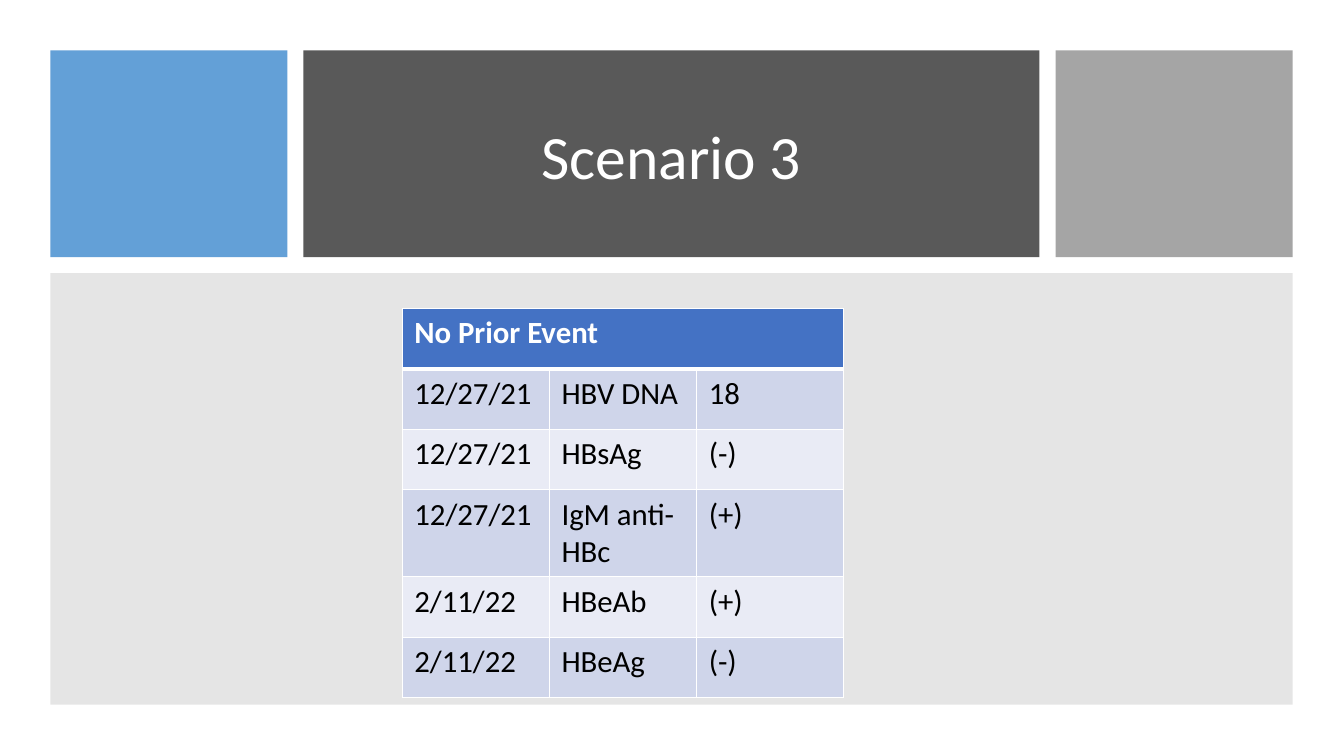
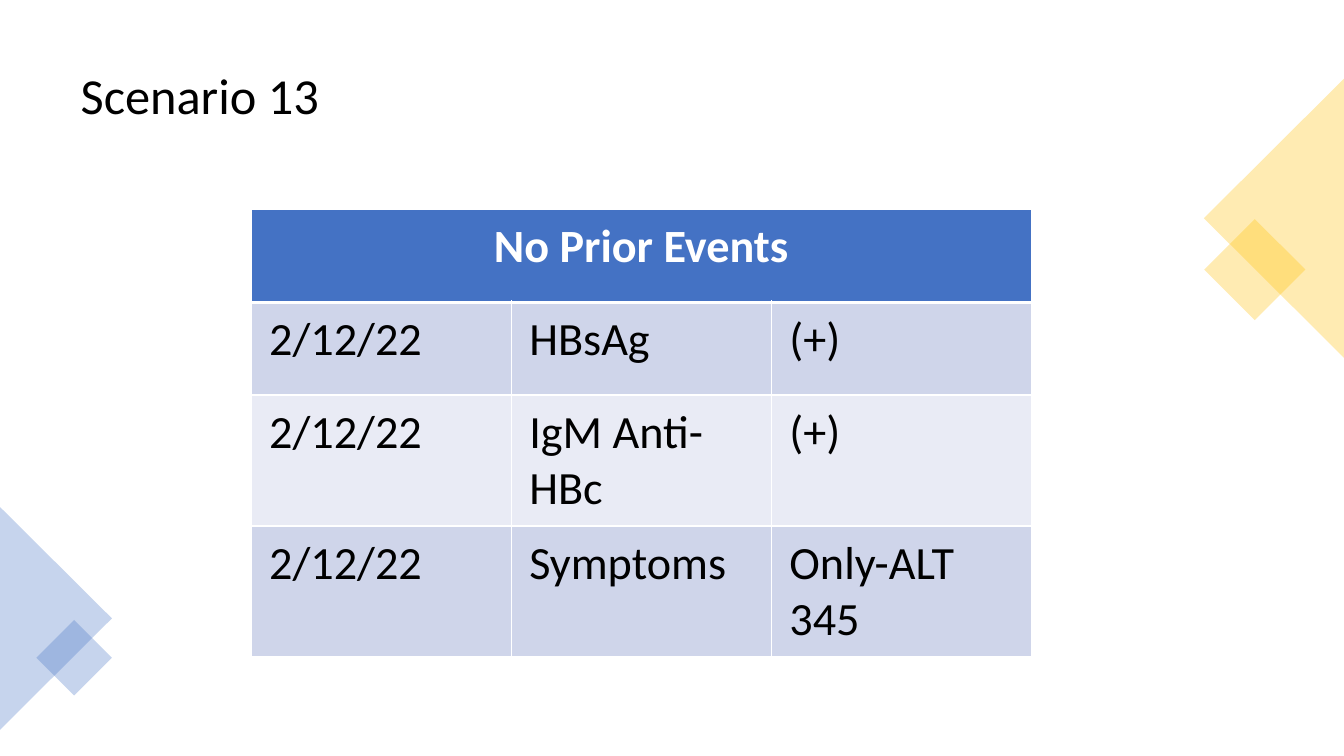
from dataclasses import dataclass

from lxml import etree
from pptx import Presentation
from pptx.dml.color import RGBColor
from pptx.enum.shapes import MSO_SHAPE
from pptx.enum.text import MSO_ANCHOR, PP_ALIGN
from pptx.oxml.ns import qn
from pptx.util import Inches, Pt

RECTANGLE = MSO_SHAPE.RECTANGLE
TRIANGLE = MSO_SHAPE.ISOSCELES_TRIANGLE
LEFT, CENTER = PP_ALIGN.LEFT, PP_ALIGN.CENTER
MIDDLE, TOP = MSO_ANCHOR.MIDDLE, MSO_ANCHOR.TOP
TITLE_ONLY = 5


@dataclass(frozen=True)
class Theme:
    font: str = "Calibri"
    white: str = "FFFFFF"
    black: str = "000000"
    sky: str = "5B9BD5"
    charcoal: str = "595959"
    silver: str = "A5A5A5"
    gray: str = "808080"
    blue: str = "4472C4"
    gold: str = "FFC000"
    row_bands: tuple = ("CFD5EA", "E9EBF5")
    banner_title: int = 44
    plain_title: int = 36
    small_table: int = 22
    large_table: int = 33
    border: int = 1
    header_border: int = 3


THEME = Theme()


def add_panel(page, kind, frame, color, opacity=100, rotation=0):
    """Add an unlined shape; frame is left, top, width, height in inches."""
    panel = page.shapes.add_shape(kind, *map(Inches, frame))
    panel.shadow.inherit = False
    panel.line.fill.background()
    panel.rotation = rotation
    panel.fill.solid()
    panel.fill.fore_color.rgb = RGBColor.from_string(color)
    if opacity < 100:
        tint = panel.element.spPr.find(".//" + qn("a:srgbClr"))
        etree.SubElement(tint, qn("a:alpha"), val=str(opacity * 1000))


def add_border(cell, side, points):
    line = etree.SubElement(cell._tc.get_or_add_tcPr(), qn(f"a:ln{side}"), w=str(Pt(points)))
    fill = etree.SubElement(line, qn("a:solidFill"))
    etree.SubElement(fill, qn("a:srgbClr"), val=THEME.white)


deck = Presentation()
deck.slide_width, deck.slide_height = Inches(13.33), Inches(7.5)

scenarios = [
    {
        "title": "Scenario 3", "title_frame": (3.33, 0.8, 6.66, 1.56),
        "title_size": THEME.banner_title, "title_color": THEME.white, "title_align": CENTER,
        "heading": "No Prior Event", "heading_align": LEFT,
        "rows": [
            ("12/27/21", "HBV DNA", "18"),
            ("12/27/21", "HBsAg", "(-)"),
            ("12/27/21", "IgM anti-HBc", "(+)"),
            ("2/11/22", "HBeAb", "(+)"),
            ("2/11/22", "HBeAg", "(-)"),
        ],
        "corner": (3.99, 3.06), "column_width": 1.46, "row_height": 0.6,
        "text_size": THEME.small_table, "inset": 0.12,
    },
    {
        "title": "Scenario 13", "title_frame": (0.7, 0.35, 11.93, 1.24),
        "title_size": THEME.plain_title, "title_color": THEME.black, "title_align": LEFT,
        "heading": "No Prior Events", "heading_align": CENTER,
        "rows": [
            ("2/12/22", "HBsAg", "(+)"),
            ("2/12/22", "IgM Anti-HBc", "(+)"),
            ("2/12/22", "Symptoms", "Only-ALT 345"),
        ],
        "corner": (2.49, 2.08), "column_width": 2.58, "row_height": 0.92,
        "text_size": THEME.large_table, "inset": 0.18,
    },
]
pages = [deck.slides.add_slide(deck.slide_layouts[TITLE_ONLY]) for _ in scenarios]

# Scenario 3: three header blocks above a content panel
margin, gap, header_height = 0.5, 0.16, 2.05
left = margin
for width, color, opacity in [
    (2.35, THEME.sky, 95), (7.3, THEME.charcoal, 100), (2.35, THEME.silver, 100),
]:
    add_panel(pages[0], RECTANGLE, (left, margin, width, header_height), color, opacity)
    left += width + gap
content_top = margin + header_height + gap
add_panel(pages[0], RECTANGLE, (margin, content_top, left - gap - margin, 4.28), THEME.gray, 20)

# Scenario 13: overlapping diamonds at the slide edges
for kind, frame, color, rotation in [
    (RECTANGLE, (12.09, 2.32, 0.71, 0.71), THEME.gold, 45),
    (TRIANGLE, (11.25, 1.47, 2.77, 1.39), THEME.gold, 270),
    (TRIANGLE, (-0.55, 5.58, 2.21, 1.11), THEME.blue, 90),
    (RECTANGLE, (0.47, 6.26, 0.53, 0.53), THEME.blue, 45),
]:
    add_panel(pages[1], kind, frame, color, 30, rotation)

# Titles and result tables
for page, scenario in zip(pages, scenarios):
    title = page.shapes.title
    page.shapes.element.append(title.element)  # bring in front of the panels
    title.left, title.top, title.width, title.height = map(Inches, scenario["title_frame"])
    title.text_frame.text = scenario["title"]
    title.text_frame.vertical_anchor = MIDDLE
    para = title.text_frame.paragraphs[0]
    para.alignment = scenario["title_align"]
    para.line_spacing = 0.9
    para.font.name = THEME.font
    para.font.size = Pt(scenario["title_size"])
    para.font.color.rgb = RGBColor.from_string(scenario["title_color"])

    rows = [(scenario["heading"], "", "")] + scenario["rows"]
    column_count = len(rows[0])
    table = page.shapes.add_table(
        len(rows), column_count, *map(Inches, scenario["corner"]),
        Inches(scenario["column_width"] * column_count),
        Inches(scenario["row_height"] * len(rows)),
    ).table
    for column in table.columns:
        column.width = Inches(scenario["column_width"])
    table.cell(0, 0).merge(table.cell(0, column_count - 1))

    for row_index, values in enumerate(rows):
        is_header = row_index == 0
        table.rows[row_index].height = Inches(scenario["row_height"])
        fill = THEME.blue if is_header else THEME.row_bands[(row_index - 1) % 2]
        text_color = THEME.white if is_header else THEME.black
        above = THEME.header_border if row_index == 1 else THEME.border
        below = THEME.header_border if is_header else THEME.border
        for column_index, value in enumerate(values):
            cell = table.cell(row_index, column_index)
            for side, points in zip("LRTB", (THEME.border, THEME.border, above, below)):
                add_border(cell, side, points)
            cell.fill.solid()
            cell.fill.fore_color.rgb = RGBColor.from_string(fill)
            cell.margin_left = cell.margin_right = Inches(scenario["inset"])
            cell.margin_top = cell.margin_bottom = Inches(scenario["inset"] / 2)
            cell.vertical_anchor = TOP
            cell.text = value
            para = cell.text_frame.paragraphs[0]
            para.alignment = scenario["heading_align"] if is_header else LEFT
            para.font.name = THEME.font
            para.font.size = Pt(scenario["text_size"])
            para.font.bold = is_header
            para.font.color.rgb = RGBColor.from_string(text_color)

deck.save("out.pptx")
